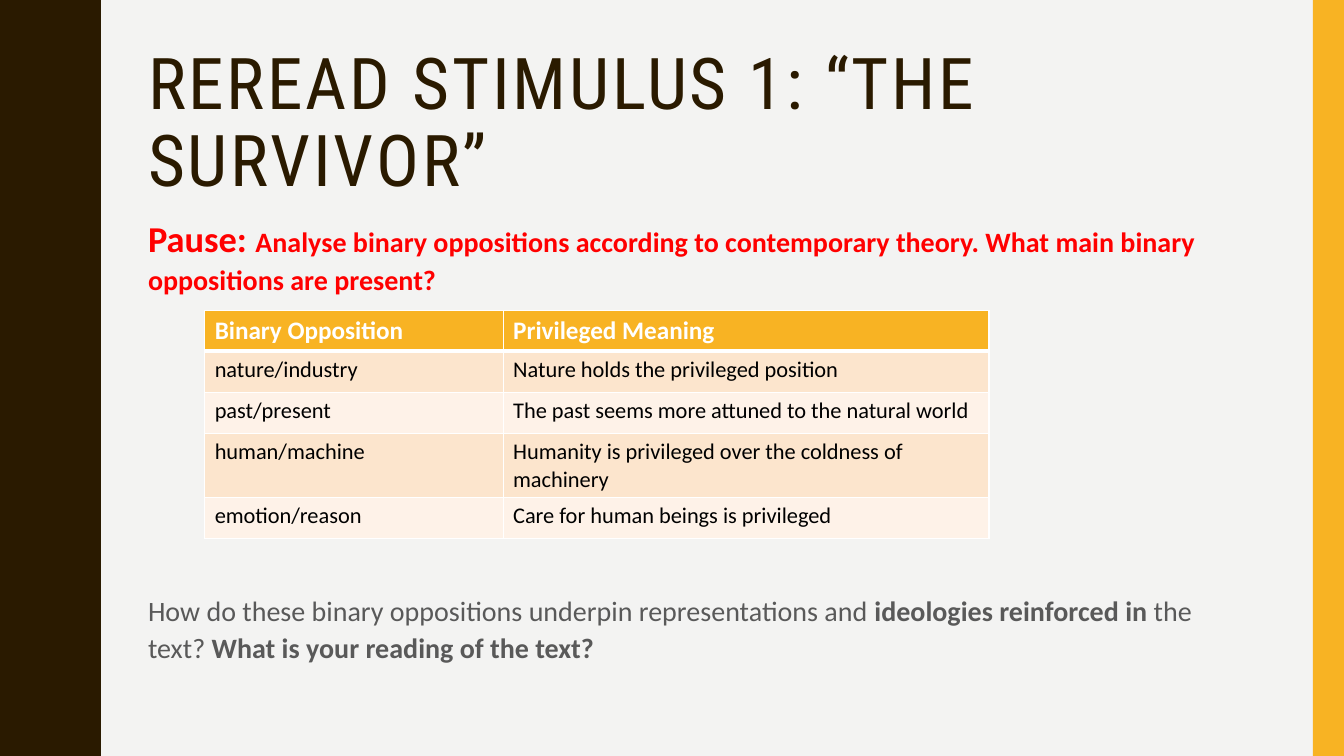
"""Build the binary oppositions slide for "The Survivor"."""
from lxml import etree
from pptx import Presentation
from pptx.dml.color import RGBColor
from pptx.enum.shapes import MSO_SHAPE as SHAPE
from pptx.enum.text import MSO_ANCHOR as ANCHOR
from pptx.oxml.ns import qn
from pptx.util import Inches, Pt

WIDTH, HEIGHT = 13.33, 7.5
DARK, GOLD, WHITE, RED, GREY = "2A1A00", "F8B323", "FFFFFF", "FF0000", "595959"
BANDS = ["FCE5CD", "FEF2E8"]

TITLE = "REREAD STIMULUS 1: “THE SURVIVOR”"
PROMPT = [
    ("Pause: ", dict(size=26, color=RED, bold=True)),
    ("Analyse binary oppositions according to contemporary theory. "
     "What main binary oppositions are present?", dict(size=20, color=RED, bold=True)),
]
QUESTION = [
    ("How do these binary oppositions underpin representations and ", dict(size=20, color=GREY)),
    ("ideologies reinforced in ", dict(size=20, color=GREY, bold=True)),
    ("the text? ", dict(size=20, color=GREY)),
    ("What is your reading of the text?", dict(size=20, color=GREY, bold=True)),
]
ROWS = [
    ("Binary Opposition", "Privileged Meaning"),
    ("nature/industry", "Nature holds the privileged position"),
    ("past/present", "The past seems more attuned to the natural world"),
    ("human/machine", "Humanity is privileged over the coldness of machinery"),
    ("emotion/reason", "Care for human beings is privileged"),
]
COLS = [2.96, 4.82]
ROW_HEIGHTS = [0.4] + [0.41] * 4

WAVE, WAVES = 1.5, 5
HALF_WAVE = [
    (0.78, 0), (0.78, 0.07), (0.79, 0.14), (0.8, 0.2), (0.81, 0.25),
    (0.83, 0.29), (0.85, 0.33), (0.87, 0.38), (0.89, 0.42), (0.91, 0.46),
    (0.93, 0.5), (0.95, 0.55), (0.96, 0.61), (0.97, 0.68), (0.97, 0.75),
]


def paint(fill, color):
    fill.solid()
    fill.fore_color.rgb = RGBColor.from_string(color)


def add_run(p, text, size=20, color=GREY, bold=False, font="Calibri", spacing=0):
    r = p.add_run()
    r.text = text
    r.font.name, r.font.size, r.font.bold = font, Pt(size), bold
    r.font.color.rgb = RGBColor.from_string(color)
    if spacing:
        r._r.get_or_add_rPr().set("spc", str(spacing * 100))


def add_text(s, box, paragraphs, line_spacing, anchor=ANCHOR.TOP):
    tf = s.shapes.add_textbox(*map(Inches, box)).text_frame
    tf.word_wrap, tf.vertical_anchor = True, anchor
    for i, (runs, before) in enumerate(paragraphs):
        p = tf.add_paragraph() if i else tf.paragraphs[0]
        p.line_spacing, p.space_before = line_spacing, Pt(before)
        for text, style in runs:
            add_run(p, text, **style)


def finish(sp, color):
    sp.shadow.inherit = False
    sp.line.fill.background()
    paint(sp.fill, color)


def add_borders(cell, **widths):
    tcPr = cell._tc.get_or_add_tcPr()
    for side, width in widths.items():
        ln = etree.SubElement(tcPr, qn(f"a:ln{side}"), w=str(Pt(width)))
        fill = etree.SubElement(ln, qn("a:solidFill"))
        etree.SubElement(fill, qn("a:srgbClr"), val=WHITE)


def add_wave(s):
    period = HALF_WAVE + [(x, WAVE - y) for x, y in HALF_WAVE[-2::-1]]
    edge = [(x, n * WAVE + y) for n in range(WAVES) for x, y in period]
    builder = s.shapes.build_freeform(0, 0, scale=Inches(1))
    builder.add_line_segments(edge + [(0, HEIGHT)], close=True)
    finish(builder.convert_to_shape(), DARK)


def add_oppositions(s):
    frame = s.shapes.add_table(len(ROWS), len(COLS), Inches(2.03), Inches(3.08),
                               Inches(sum(COLS)), Inches(sum(ROW_HEIGHTS)))
    table = frame.table
    for col, width in zip(table.columns, COLS):
        col.width = Inches(width)
    for i, texts in enumerate(ROWS):
        table.rows[i].height = Inches(ROW_HEIGHTS[i])
        header = i == 0
        for j, text in enumerate(texts):
            cell = table.cell(i, j)
            add_borders(cell, L=1, R=1, T=3 if i == 1 else 1, B=3 if header else 1)
            paint(cell.fill, GOLD if header else BANDS[(i - 1) % 2])
            add_run(cell.text_frame.paragraphs[0], text, size=18 if header else 16,
                    color=WHITE if header else "000000", bold=header)


def main():
    prs = Presentation()
    prs.slide_width, prs.slide_height = Inches(WIDTH), Inches(HEIGHT)
    s = prs.slides.add_slide(prs.slide_layouts[6])
    paint(s.background.fill, "F3F3F2")
    add_wave(s)
    bar = s.shapes.add_shape(SHAPE.RECTANGLE, Inches(13.02), 0, Inches(0.31), Inches(HEIGHT))
    finish(bar, GOLD)
    title = [(TITLE, dict(size=51, color=DARK, font="Roboto Condensed", spacing=2))]
    add_text(s, (1.37, 0.42, 11.13, 1.63), [(title, 0)], 0.9, ANCHOR.MIDDLE)
    add_text(s, (1.37, 2.05, 11.13, 5.15), [(PROMPT, 7), (QUESTION, 210)], 1.1)
    add_oppositions(s)
    prs.save("out.pptx")


if __name__ == "__main__":
    main()
